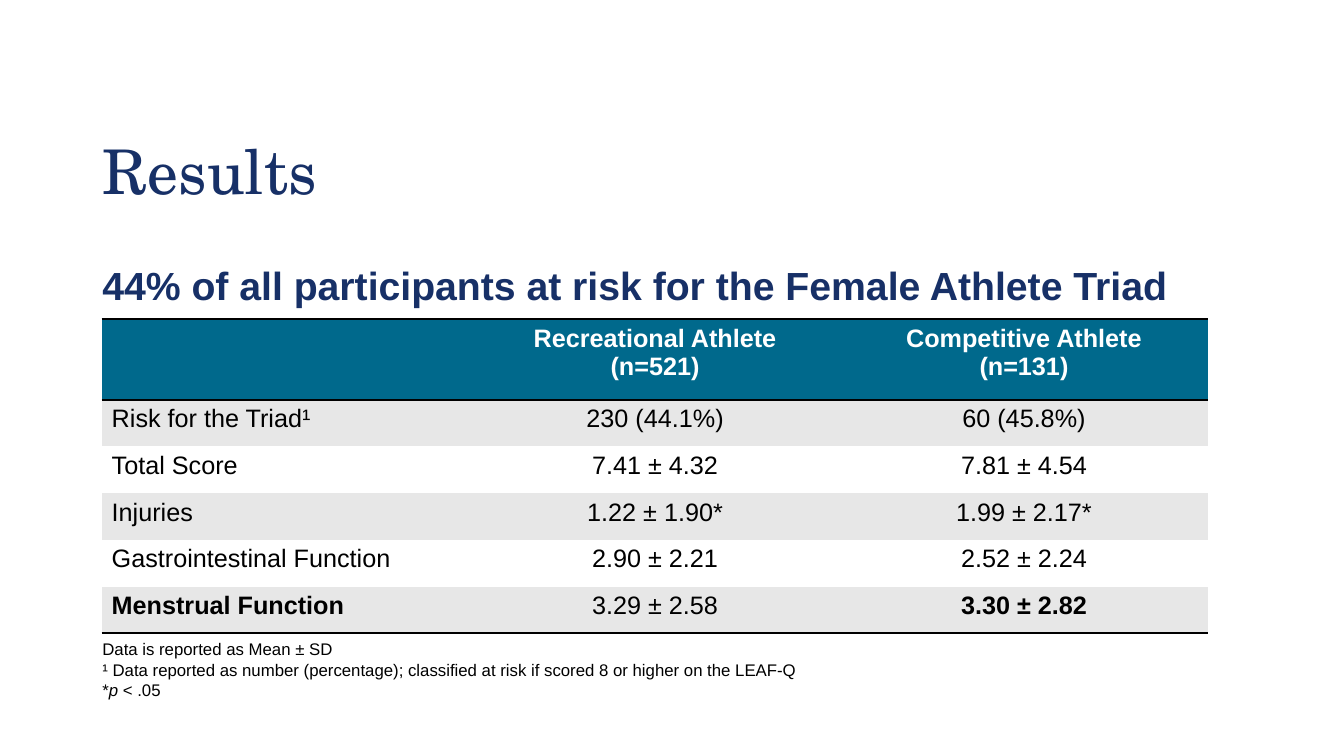
"""Builds the Results slide: a headline, a table of athlete scores and its footnotes."""
import pptx
import pptx.dml.color
import pptx.enum.text
import pptx.oxml
import pptx.oxml.ns
import pptx.util

THEME = {
    "navy": "173067", "teal": "00698C", "band": "E7E7E7", "white": "FFFFFF", "black": "000000",
    "serif": "TeX Gyre Schola", "sans": "Arial",
    "title": 44, "headline": 28, "cell": 18, "note": 12, "rule": 2,
}
NO_STYLE = "{2D5ABB26-0587-4C30-8999-92F81FD0307C}"
CENTER = pptx.enum.text.PP_ALIGN.CENTER
TOP = pptx.enum.text.MSO_ANCHOR.TOP
MIDDLE = pptx.enum.text.MSO_ANCHOR.MIDDLE


def add_run(p, text, font, size, color, **flags):
    r = p.add_run()
    r.text = text
    for name, value in {"name": font, "size": pptx.util.Pt(size), **flags}.items():
        setattr(r.font, name, value)
    r.font.color.rgb = pptx.dml.color.RGBColor.from_string(color)


def add_rule(cell, side):
    ln = pptx.oxml.parse_xml(
        f'<a:{side} {pptx.oxml.ns.nsdecls("a")} w="{pptx.util.Pt(THEME["rule"])}">'
        f'<a:solidFill><a:srgbClr val="{THEME["black"]}"/></a:solidFill></a:{side}>')
    cell._tc.get_or_add_tcPr().insert(0, ln)


prs = pptx.Presentation()
prs.slide_width = pptx.util.Inches(13.33)
prs.slide_height = pptx.util.Inches(7.5)
s = prs.slides.add_slide(prs.slide_layouts[6])
col, row = prs.slide_width / 160, prs.slide_height / 90

title = (THEME["serif"], THEME["title"], THEME["navy"])
headline = (THEME["sans"], THEME["headline"], THEME["navy"])
note = (THEME["sans"], THEME["note"], THEME["black"])
plain, bold, italic = {}, {"bold": True}, {"italic": True}

text_boxes = [
    (13.5, 138, 14.6, MIDDLE, 0.9, title, [[("Results", plain)]]),
    (31.1, 138, 6, TOP, 0.9, headline,
     [[("44% of all participants at risk for the Female Athlete Triad", bold)]]),
    (75.5, 106.3, 8.5, TOP, 1.0, note, [
        [("Data is reported as Mean ± SD", plain)],
        [("¹ Data reported as number (percentage); classified at risk if scored 8 or higher "
          "on the LEAF-Q", plain)],
        [("*", plain), ("p ", italic), ("< .05", plain)]]),
]
for top, width, height, anchor, spacing, style, paragraphs in text_boxes:
    sp = s.shapes.add_textbox(int(11 * col), int(top * row), int(width * col), int(height * row))
    tf = sp.text_frame
    for name, value in {"word_wrap": True, "vertical_anchor": anchor}.items():
        setattr(tf, name, value)
    for i, runs in enumerate(paragraphs):
        p = tf.add_paragraph() if i else tf.paragraphs[0]
        p.line_spacing = spacing
        for text, flags in runs:
            add_run(p, text, *style, **flags)

scores = [
    ("", "Recreational Athlete\n(n=521)", "Competitive Athlete\n(n=131)"),
    ("Risk for the Triad¹", "230 (44.1%)", "60 (45.8%)"),
    ("Total Score", "7.41 ± 4.32", "7.81 ± 4.54"),
    ("Injuries", "1.22 ± 1.90*", "1.99 ± 2.17*"),
    ("Gastrointestinal Function", "2.90 ± 2.21", "2.52 ± 2.24"),
    ("Menstrual Function", "3.29 ± 2.58", "3.30 ± 2.82"),
]
bold_cells = {"Menstrual Function", "3.30 ± 2.82"}
last = len(scores) - 1
header_height, score_height, column_width = 9.6, 5.56, 43.92

table = s.shapes.add_table(
    len(scores), 3, int(12.1 * col), int(38 * row), int(3 * column_width * col),
    int((header_height + last * score_height) * row)).table
table.horz_banding = False
table._tbl.tblPr.find(pptx.oxml.ns.qn("a:tableStyleId")).text = NO_STYLE
for column in table.columns:
    column.width = int(column_width * col)

for i, values in enumerate(scores):
    header = i == 0
    table.rows[i].height = int((header_height if header else score_height) * row)
    fill = THEME["teal"] if header else THEME["band"] if i % 2 else THEME["white"]
    color = THEME["white"] if header else THEME["black"]
    for j, value in enumerate(values):
        cell = table.cell(i, j)
        cell.fill.solid()
        cell.fill.fore_color.rgb = pptx.dml.color.RGBColor.from_string(fill)
        if i in (0, last):
            add_rule(cell, "lnB")
        if header:
            add_rule(cell, "lnT")
        for k, line in enumerate(value.split("\n") if value else []):
            p = cell.text_frame.add_paragraph() if k else cell.text_frame.paragraphs[0]
            if j:
                p.alignment = CENTER
            add_run(p, line, THEME["sans"], THEME["cell"], color,
                    bold=header or value in bold_cells)

prs.save("out.pptx")
